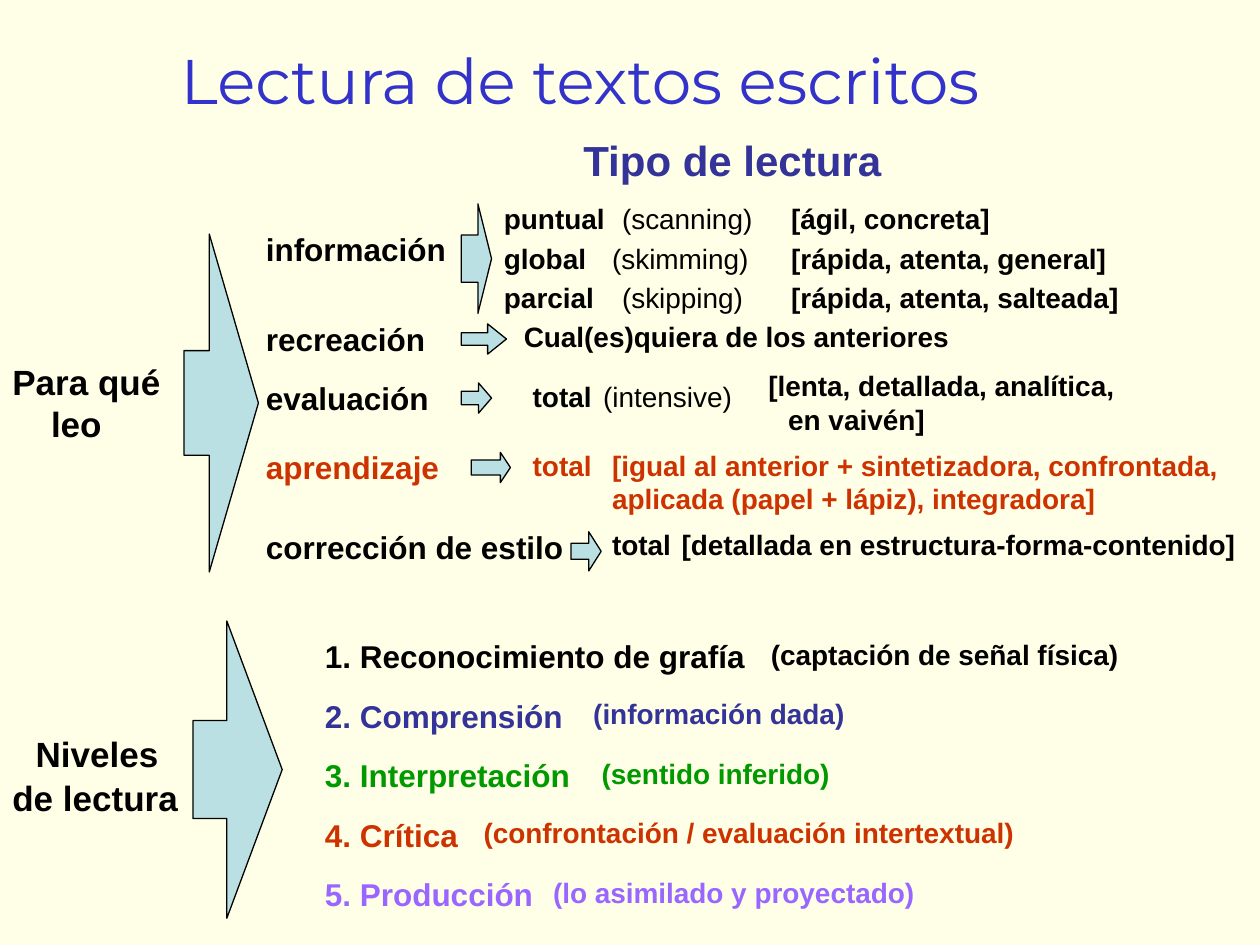
from pptx import Presentation
from pptx.dml.color import RGBColor
from pptx.enum.shapes import MSO_SHAPE
from pptx.enum.text import MSO_AUTO_SIZE, PP_ALIGN
from pptx.util import Cm, Pt

RIGHT_ARROW = MSO_SHAPE.RIGHT_ARROW
NO_AUTOFIT = MSO_AUTO_SIZE.NONE
CENTER = PP_ALIGN.CENTER
LEFT = PP_ALIGN.LEFT

CREAM = RGBColor(0xFF, 0xFF, 0xE7)
BLACK = RGBColor(0, 0, 0)
BLUE = RGBColor(0x33, 0x33, 0xCC)
NAVY = RGBColor(0x33, 0x33, 0x99)
RED = RGBColor(0xCC, 0x33, 0)
GREEN = RGBColor(0, 0x99, 0)
PURPLE = RGBColor(0x99, 0x66, 0xFF)
PALE_TEAL = RGBColor(0xBB, 0xE0, 0xE3)

READING_TYPES = [
    ("puntual", 2.54, "(scanning)", 12.29, 3.15, "[ágil, concreta]", 4.52),
    ("global", 2.18, "(skimming)", 12.09, 3.28, "[rápida, atenta, general]", 6.88),
    ("parcial", 2.34, "(skipping)", 12.29, 2.95, "[rápida, atenta, salteada]", 7.14),
]

PURPOSES = [
    ("información", 1.93, 4.14, BLACK, (9.3, 1.52, 0.61, 2.21), (0.43, 0.45), []),
    ("recreación", 3.73, 3.73, BLACK, (9.3, 3.94, 0.91, 0.61), (0.41, 0.62),
     [("Cual(es)quiera de los anteriores", 10.31, 9.12, True)]),
    ("evaluación", 4.93, 3.78, BLACK, (9.3, 5.13, 0.61, 0.61), (0.44, 0.43),
     [("total", 10.49, 1.7, True), ("(intensive)", 11.91, 3.12, False)]),
    ("aprendizaje", 6.32, 4.01, RED, (9.5, 6.53, 0.79, 0.61), (0.5, 0.33),
     [("total", 10.49, 1.7, True),
      ("[igual al anterior + sintetizadora, confrontada,\n"
       "aplicada (papel + lápiz), integradora]", 12.09, 12.78, True)]),
    ("corrección de estilo", 7.92, 6.5, BLACK, (11.51, 8.13, 0.61, 0.79), (0.41, 0.41),
     [("total", 12.09, 1.7, True),
      ("[detallada en estructura-forma-contenido]", 13.49, 11.71, True)]),
]

LEVELS = [
    ("1. Reconocimiento de grafía", 8.97, "(captación de señal física)", 15.29, 7.54, BLACK),
    ("2. Comprensión", 5.31, "(información dada)", 11.71, 5.59, NAVY),
    ("3. Interpretación", 5.5, "(sentido inferido)", 11.88, 5.1, GREEN),
    ("4. Crítica", 3.2, "(confrontación / evaluación intertextual)", 9.5, 11.25, RED),
    ("5. Producción", 4.7, "(lo asimilado y proyectado)", 10.9, 7.82, PURPLE),
]


def add_text(page, text, left, top, width, size, color=BLACK, bold=True,
             font="Arial", align=LEFT, indents=()):
    lines = text.split("\n")
    height = 0.25 + len(lines) * size * 0.0423
    box = page.shapes.add_textbox(Cm(left), Cm(top), Cm(width), Cm(height))
    frame = box.text_frame
    frame.word_wrap = False
    frame.auto_size = NO_AUTOFIT
    frame.text = text
    for para in frame.paragraphs:
        para.alignment = align
        para.font.name = font
        para.font.size = Pt(size)
        para.font.bold = bold
        para.font.color.rgb = color
    for para, indent in zip(frame.paragraphs, indents):
        para._p.get_or_add_pPr().set("marL", str(Cm(indent)))
    return frame


def add_arrow(page, left, top, width, height, adjustments):
    arrow = page.shapes.add_shape(RIGHT_ARROW, Cm(left), Cm(top), Cm(width), Cm(height))
    arrow.shadow.inherit = False
    arrow.fill.solid()
    arrow.fill.fore_color.rgb = PALE_TEAL
    arrow.line.color.rgb = BLACK
    arrow.line.width = Pt(0.75)
    for index, value in enumerate(adjustments):
        arrow.adjustments[index] = value


def add_title(page, left, top):
    add_text(page, "Lectura de textos escritos", left, top, 16.79, 36, BLUE,
             bold=False, font="Montserrat", align=CENTER)


def add_reading_types(page, left, top):
    for row, (name, name_width, term, term_left, term_width, traits, traits_width) in enumerate(READING_TYPES):
        row_top = top + row * 0.8
        add_text(page, name, left + 9.91, row_top, name_width, 16)
        add_text(page, term, left + term_left, row_top, term_width, 16, bold=False)
        add_text(page, traits, left + 15.7, row_top, traits_width, 16)


def add_purposes(page, left, top):
    add_text(page, "Tipo de lectura", left + 11.51, top, 6.53, 24, NAVY)
    add_text(page, "Para qué\nleo", left, top + 4.55, 3.68, 20, indents=(0, 0.78))
    add_arrow(page, left + 3.71, top + 2.13, 1.5, 6.81, (0.31, 0.66))
    add_reading_types(page, left, top + 1.35)
    for name, row_top, width, color, arrow, adjustments, details in PURPOSES:
        add_text(page, name, left + 5.11, top + row_top, width, 18, color)
        arrow_left, arrow_top, arrow_width, arrow_height = arrow
        add_arrow(page, left + arrow_left, top + arrow_top, arrow_width, arrow_height, adjustments)
        for text, text_left, text_width, bold in details:
            add_text(page, text, left + text_left, top + row_top, text_width, 16, color, bold)
    add_text(page, "[lenta, detallada, analítica,\nen vaivén]", left + 15.24, top + 4.72,
             7.85, 16, indents=(0, 0.4))


def add_levels(page, left, top):
    frame = add_text(page, "Niveles\nde lectura", left, top + 2.13, 3.84, 20, indents=(0.47, 0))
    frame.paragraphs[0].space_after = Pt(1)
    add_arrow(page, left + 3.89, top, 1.8, 5.99, (0.33, 0.62))
    for row, (name, name_width, detail, detail_left, detail_width, color) in enumerate(LEVELS):
        row_top = top + 0.2 + row * 1.2
        add_text(page, name, left + 6.3, row_top, name_width, 18, color)
        add_text(page, detail, left + detail_left, row_top, detail_width, 16, color)


def main():
    deck = Presentation()
    deck.slide_width = Cm(25.4)
    deck.slide_height = Cm(19.05)
    page = deck.slides.add_slide(deck.slide_layouts[6])
    page.background.fill.solid()
    page.background.fill.fore_color.rgb = CREAM
    add_title(page, 3.3, 0.71)
    add_purposes(page, 0, 2.59)
    add_levels(page, 0, 12.52)
    deck.save("out.pptx")


if __name__ == "__main__":
    main()
